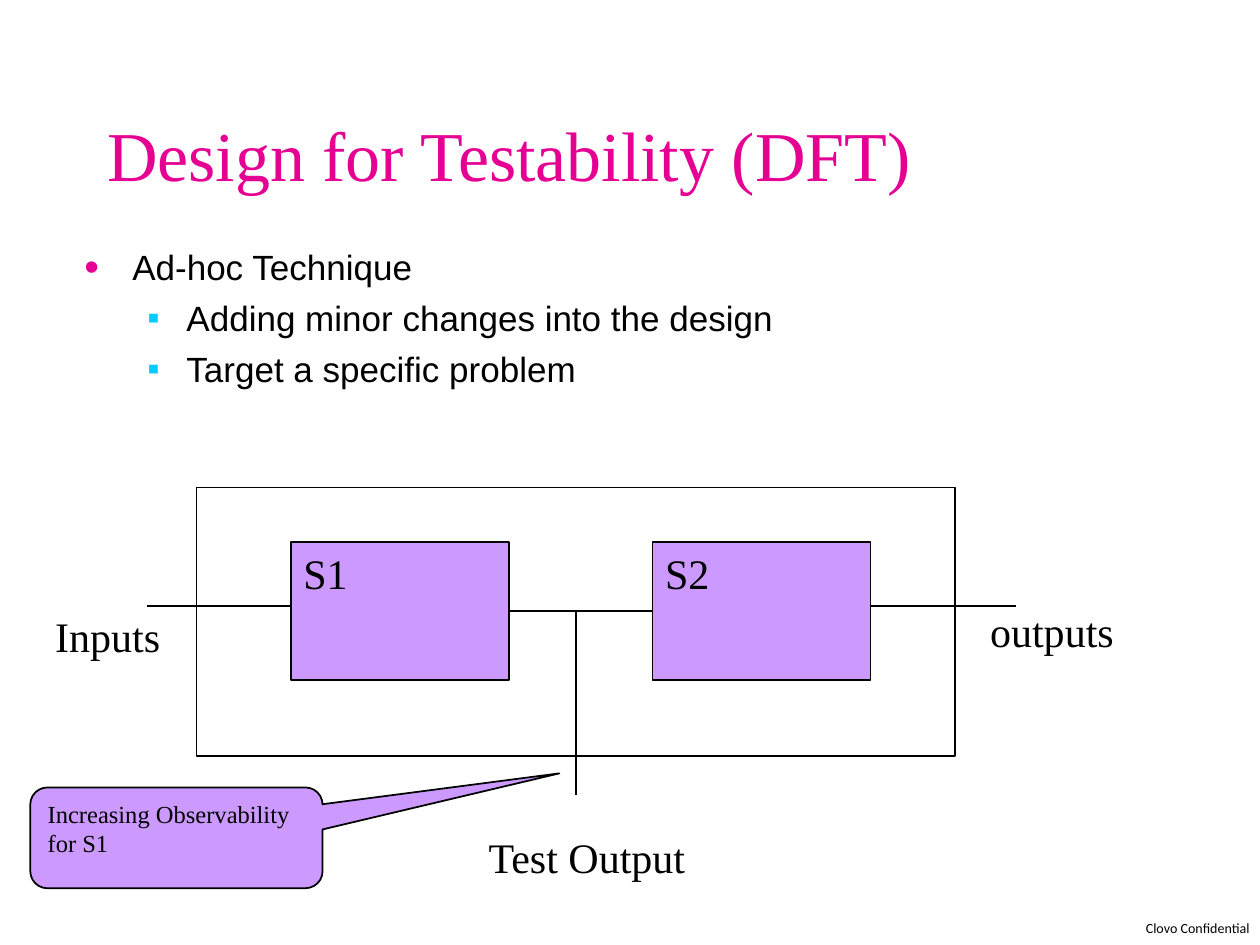
from lxml.etree import SubElement
from pptx import Presentation
from pptx.dml.color import RGBColor
from pptx.enum.shapes import MSO_CONNECTOR as Connector, MSO_SHAPE as Shape
from pptx.enum.text import MSO_ANCHOR as Anchor, MSO_AUTO_SIZE as AutoSize, PP_ALIGN as Align
from pptx.oxml.ns import qn
from pptx.util import Inches, Pt

BLACK = RGBColor(0x00, 0x00, 0x00)
MAGENTA = RGBColor(0xE5, 0x00, 0x93)
CYAN = RGBColor(0x00, 0xCC, 0xFF)
LILAC = RGBColor(0xCC, 0x99, 0xFF)
SERIF = "Times New Roman"
SANS = "Arial"
BULLETS = {
    0: {"mark": "•", "color": MAGENTA, "size": 120, "left": 0.38, "hang": 0.38},
    1: {"mark": "▪", "color": CYAN, "size": 100, "left": 0.81, "hang": 0.31},
}


def apply(target, formats):
    for name, value in formats.items():
        setattr(target, name, value)


class Deck:
    def __init__(self):
        self.presentation = Presentation()
        apply(self.presentation, {"slide_width": Inches(10), "slide_height": Inches(7.5)})
        self.slide = self.presentation.slides.add_slide(self.presentation.slide_layouts[1])

    def place(self, shape, box):
        apply(shape, dict(zip(("left", "top", "width", "height"), map(Inches, box))))

    def style(self, paragraph, size, font=SERIF, color=BLACK, align=Align.LEFT):
        paragraph.alignment = align
        apply(paragraph.font, {"name": font, "size": Pt(size), "bold": False})
        paragraph.font.color.rgb = color

    def frame(self, shape, anchor=Anchor.TOP, wrap=True):
        formats = {"auto_size": AutoSize.NONE, "word_wrap": wrap, "vertical_anchor": anchor}
        apply(shape.text_frame, formats)
        return shape.text_frame

    def title(self, words, box):
        heading = self.slide.shapes.title
        self.place(heading, box)
        frame = self.frame(heading, Anchor.MIDDLE)
        frame.text = words
        self.style(frame.paragraphs[0], 40, color=MAGENTA)

    def bullet(self, paragraph, mark, color, size, left, hang):
        props = paragraph._p.get_or_add_pPr()
        props.set("marL", str(Inches(left)))
        props.set("indent", str(-Inches(hang)))
        tint = SubElement(props, qn("a:buClr"))
        SubElement(tint, qn("a:srgbClr"), val=str(color))
        SubElement(props, qn("a:buSzPct"), val=str(size * 1000))
        SubElement(props, qn("a:buFont"), typeface=SANS)
        SubElement(props, qn("a:buChar"), char=mark)

    def body(self, items, box):
        outline = self.slide.placeholders[1]
        self.place(outline, box)
        frame = self.frame(outline)
        frame.text = "\n".join(words for _, words in items)
        for index, (paragraph, (level, _)) in enumerate(zip(frame.paragraphs, items)):
            self.bullet(paragraph, **BULLETS[level])
            apply(paragraph, {"level": level, "space_before": Pt(5 if index else 0)})
            self.style(paragraph, 20, SANS)

    def block(self, kind, box, words="", size=24, fill=LILAC):
        block = self.slide.shapes.add_shape(kind, *map(Inches, box))
        block.shadow.inherit = False
        if fill is None:
            block.fill.background()
        else:
            block.fill.solid()
            block.fill.fore_color.rgb = fill
        block.line.color.rgb = BLACK
        block.line.width = Pt(1)
        if words:
            frame = self.frame(block)
            frame.text = words
            self.style(frame.paragraphs[0], size)
        return block

    def wire(self, start, end):
        ends = map(Inches, (*start, *end))
        wire = self.slide.shapes.add_connector(Connector.STRAIGHT, *ends)
        wire.line.color.rgb = BLACK
        wire.line.width = Pt(1)
        SubElement(wire._element.spPr, qn("a:effectLst"))

    def label(self, words, box):
        label = self.slide.shapes.add_textbox(*map(Inches, box))
        frame = self.frame(label)
        frame.text = words
        self.style(frame.paragraphs[0], 24)

    def footer(self, words, box):
        footer = self.slide.shapes.add_textbox(*map(Inches, box))
        frame = self.frame(footer, wrap=False)
        apply(frame, dict.fromkeys(
            ("margin_left", "margin_top", "margin_right", "margin_bottom"), 0))
        frame.text = words
        self.style(frame.paragraphs[0], 8, "Calibri", align=Align.RIGHT)


def main():
    deck = Deck()
    deck.footer("Clovo Confidential", (9.08, 7.3, 0.84, 0.13))
    deck.title("Design for Testability (DFT)", (0.75, 0.52, 8.5, 1.4))
    deck.body([
        (0, "Ad-hoc Technique"),
        (1, "Adding minor changes into the design"),
        (1, "Target a specific problem"),
    ], (0.57, 1.9, 8.78, 1.32))

    deck.block(Shape.RECTANGLE, (1.56, 3.87, 6.02, 2.13), fill=None)
    for stage, left in (("S1", 2.31), ("S2", 5.18)):
        deck.block(Shape.RECTANGLE, (left, 4.3, 1.73, 1.1), stage)

    for start, end in (
        ((4.04, 4.85), (5.18, 4.85)),
        ((1.17, 4.81), (2.31, 4.81)),
        ((6.91, 4.81), (8.06, 4.81)),
        ((4.57, 4.85), (4.57, 6.31)),
    ):
        deck.wire(start, end)

    deck.label("Inputs", (0.34, 4.8, 1.14, 0.5))
    deck.label("outputs", (7.76, 4.76, 1.56, 0.5))
    deck.label("Test Output", (3.78, 6.55, 1.93, 0.5))

    callout = deck.block(Shape.ROUNDED_RECTANGULAR_CALLOUT, (0.24, 6.25, 2.32, 0.8),
                         "Increasing Observability for S1", 14)
    for index, value in enumerate((1.31, -0.64, 0.17)):
        callout.adjustments[index] = value

    deck.presentation.save("out.pptx")


if __name__ == "__main__":
    main()
